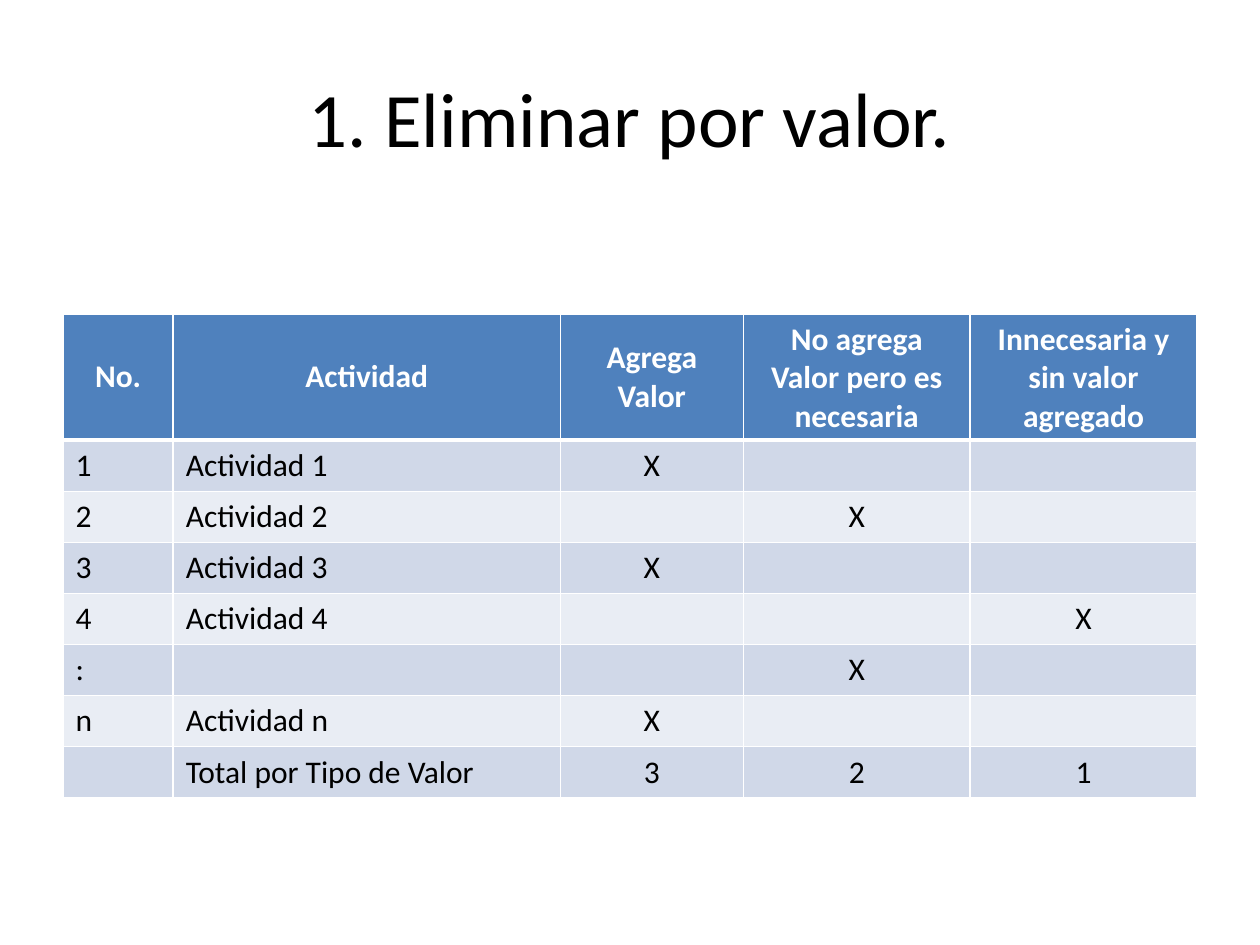
from dataclasses import dataclass

from lxml import etree
from pptx import Presentation
from pptx.dml.color import RGBColor
from pptx.enum import text as t
from pptx.oxml import ns
from pptx.util import Pt

HUES = {"ink": "000000", "white": "FFFFFF", "head": "4F81BD",
        "dark": "D0D8E8", "light": "E9EDF4"}
LEFT, CENTER = t.PP_ALIGN.LEFT, t.PP_ALIGN.CENTER
TOP, MIDDLE = t.MSO_ANCHOR.TOP, t.MSO_ANCHOR.MIDDLE


@dataclass(frozen=True)
class Column:
    head: str
    width: float
    align: t.PP_ALIGN


@dataclass(frozen=True)
class Look:
    fill: str
    ink: str
    bold: bool
    anchor: t.MSO_ANCHOR
    base: float


COLUMNS = [
    Column("No.", 63, LEFT),
    Column("Actividad", 221.2, LEFT),
    Column("Agrega Valor", 104.6, CENTER),
    Column("No agrega Valor pero es necesaria", 129.6, CENTER),
    Column("Innecesaria y sin valor agregado", 129.6, CENTER),
]
ROWS = [
    ("1", "Actividad 1", "X", "", ""),
    ("2", "Actividad 2", "", "X", ""),
    ("3", "Actividad 3", "X", "", ""),
    ("4", "Actividad 4", "", "", "X"),
    (":", "", "", "X", ""),
    ("n", "Actividad n", "X", "", ""),
    ("", "Total por Tipo de Valor", "3", "2", "1"),
]
HEAD = Look("head", "white", True, MIDDLE, 3)
BANDS = [Look(hue, "ink", False, TOP, 1) for hue in ("dark", "light")]


def write(frame, words: str, *, size: float = 18, ink: str = "ink",
          bold: bool = False, align: t.PP_ALIGN = LEFT) -> None:
    """Put one formatted paragraph into a text frame."""
    para = frame.paragraphs[0]
    para.alignment = align
    if words:
        run = para.add_run()
        run.text = words
        font = run.font
        font.name, font.size, font.bold = "Calibri", Pt(size), bold
        font.color.rgb = RGBColor.from_string(HUES[ink])


def edge(cell, side: str, width: float) -> None:
    """Draw a white border on one side of a cell."""
    line = etree.SubElement(cell._tc.get_or_add_tcPr(), ns.qn(f"a:ln{side}"),
                            w=str(Pt(width)))
    fill = etree.SubElement(line, ns.qn("a:solidFill"))
    etree.SubElement(fill, ns.qn("a:srgbClr"), val=HUES["white"])


def paint(cell, words: str, look: Look, align: t.PP_ALIGN, roof: float) -> None:
    """Fill one table cell with its text, borders and colour."""
    write(cell.text_frame, words, ink=look.ink, bold=look.bold, align=align)
    cell.vertical_anchor = look.anchor
    for side, width in zip("LRTB", (1, 1, roof, look.base)):
        edge(cell, side, width)
    cell.fill.solid()
    cell.fill.fore_color.rgb = RGBColor.from_string(HUES[look.fill])


def title(slide, words: str) -> None:
    """Add the centred slide title."""
    frame = slide.shapes.add_textbox(Pt(36), Pt(21.6), Pt(648), Pt(90)).text_frame
    frame.word_wrap = True
    frame.vertical_anchor = MIDDLE
    write(frame, words, size=44, align=CENTER)


def grid(slide) -> None:
    """Add the table of activities by type of value."""
    high, low = 72, 29.2
    table = slide.shapes.add_table(
        len(ROWS) + 1, len(COLUMNS), Pt(36), Pt(179.5),
        Pt(sum(col.width for col in COLUMNS)), Pt(high + low * len(ROWS))).table
    for slot, col in zip(table.columns, COLUMNS):
        slot.width = Pt(col.width)
    for y, row in enumerate([tuple(col.head for col in COLUMNS), *ROWS]):
        look = BANDS[(y - 1) % 2] if y else HEAD
        table.rows[y].height = Pt(low if y else high)
        for x, words in enumerate(row):
            align = COLUMNS[x].align if y else CENTER
            paint(table.cell(y, x), words, look, align, 3 if y == 1 else 1)


def main() -> None:
    """Build and save the slide."""
    deck = Presentation()
    deck.slide_width, deck.slide_height = Pt(720), Pt(540)
    slide = deck.slides.add_slide(deck.slide_layouts[6])
    title(slide, "1. Eliminar por valor.")
    grid(slide)
    deck.save("out.pptx")


if __name__ == "__main__":
    main()
